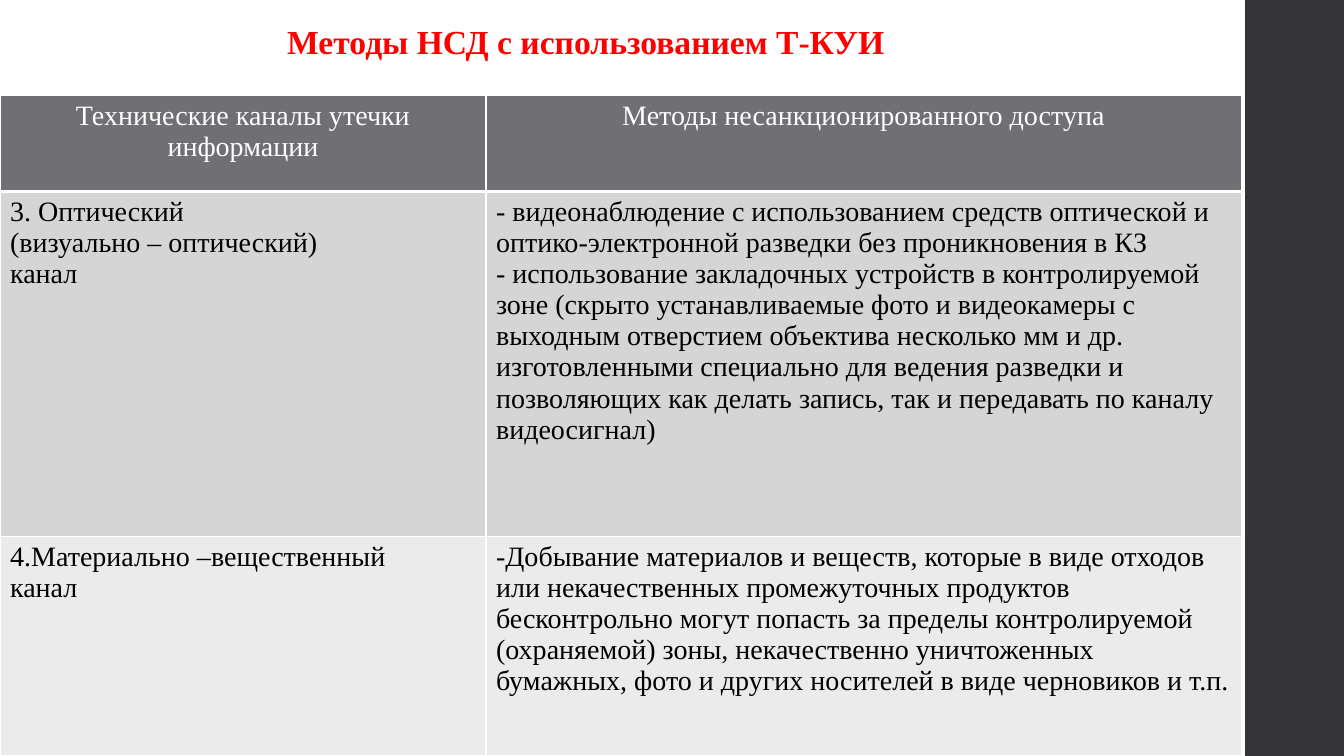
import pptx
import pptx.dml.color
import pptx.enum.shapes
import pptx.enum.text
import pptx.oxml
import pptx.oxml.ns
import pptx.util

Inches = pptx.util.Inches
RGBColor = pptx.dml.color.RGBColor

WHITE = RGBColor(0xFF, 0xFF, 0xFF)
BLACK = RGBColor(0x00, 0x00, 0x00)
RED = RGBColor(0xFF, 0x00, 0x00)
CHARCOAL = RGBColor(0x35, 0x35, 0x37)
HEADER_GRAY = RGBColor(0x6F, 0x6F, 0x74)
BAND_GRAYS = [RGBColor(0xD5, 0xD5, 0xD6), RGBColor(0xEB, 0xEB, 0xEB)]

FONT = "Times New Roman"
TITLE_FORMAT = {"name": FONT, "size": pptx.util.Pt(24), "bold": True}
CELL_FORMAT = {"name": FONT, "size": pptx.util.Pt(20), "bold": False}

COLUMN_WIDTHS = [4.82, 7.49]
ROW_HEIGHTS = [0.95, 3.42, 2.18]
ROWS = [
    [
        ["Технические каналы утечки информации"],
        ["Методы несанкционированного доступа"],
    ],
    [
        ["3. Оптический", "(визуально – оптический)", "канал"],
        [
            "- видеонаблюдение с использованием средств оптической и "
            "оптико-электронной разведки без проникновения в КЗ",
            "- использование закладочных устройств в контролируемой зоне "
            "(скрыто устанавливаемые фото и видеокамеры с выходным отверстием "
            "объектива несколько мм и др. изготовленными специально для ведения "
            "разведки и позволяющих как делать запись, так и передавать по каналу "
            "видеосигнал)",
        ],
    ],
    [
        ["4.Материально –вещественный", "канал"],
        [
            "-Добывание материалов и веществ, которые в виде отходов или "
            "некачественных промежуточных продуктов бесконтрольно могут попасть "
            "за пределы контролируемой (охраняемой) зоны, некачественно "
            "уничтоженных бумажных, фото и других носителей в виде черновиков и т.п.",
        ],
    ],
]


def write_text(tf, paragraphs, font_format, color, align):
    for i, text in enumerate(paragraphs):
        p = tf.paragraphs[0] if i == 0 else tf.add_paragraph()
        p.alignment = align
        r = p.add_run()
        r.text = text
        for name, value in font_format.items():
            setattr(r.font, name, value)
        r.font.color.rgb = color


def set_borders(cell, widths):
    """Draw white cell borders; widths maps L, R, T, B, in that order, to points."""
    tc_pr = cell._tc.get_or_add_tcPr()
    for side, width in widths.items():
        tc_pr.append(pptx.oxml.parse_xml(
            f'<a:ln{side} {pptx.oxml.ns.nsdecls("a")} w="{pptx.util.Pt(width)}">'
            f'<a:solidFill><a:srgbClr val="{WHITE}"/></a:solidFill></a:ln{side}>'
        ))


def add_side_bar(slide):
    sp = slide.shapes.add_shape(
        pptx.enum.shapes.MSO_SHAPE.RECTANGLE,
        Inches(12.35), Inches(0), Inches(0.98), Inches(7.5))
    sp.shadow.inherit = False
    sp.fill.solid()
    sp.fill.fore_color.rgb = CHARCOAL
    sp.line.fill.background()


def add_methods_table(slide):
    table = slide.shapes.add_table(
        len(ROWS), len(COLUMN_WIDTHS), Inches(0), Inches(0.95),
        Inches(sum(COLUMN_WIDTHS)), Inches(sum(ROW_HEIGHTS))).table
    for column, width in zip(table.columns, COLUMN_WIDTHS):
        column.width = Inches(width)
    for i, (row, height) in enumerate(zip(table.rows, ROW_HEIGHTS)):
        row.height = Inches(height)
        header = i == 0
        for cell, paragraphs in zip(row.cells, ROWS[i]):
            set_borders(cell, {"L": 1, "R": 1, "T": 3 if i == 1 else 1,
                               "B": 3 if header else 1})
            cell.fill.solid()
            cell.fill.fore_color.rgb = HEADER_GRAY if header else BAND_GRAYS[i - 1]
            align = pptx.enum.text.PP_ALIGN.CENTER if header else None
            write_text(cell.text_frame, paragraphs, CELL_FORMAT,
                       WHITE if header else BLACK, align)


def add_title(slide, text):
    sp = slide.shapes.add_textbox(Inches(2.75), Inches(0.16), Inches(6.19), Inches(0.5))
    tf = sp.text_frame
    tf.word_wrap = True
    tf.auto_size = pptx.enum.text.MSO_AUTO_SIZE.SHAPE_TO_FIT_TEXT
    write_text(tf, [text], TITLE_FORMAT, RED, None)


def main():
    prs = pptx.Presentation()
    prs.slide_width = Inches(13.33)
    prs.slide_height = Inches(7.5)
    slide = prs.slides.add_slide(prs.slide_layouts[6])
    add_side_bar(slide)
    add_methods_table(slide)
    add_title(slide, "Методы НСД с использованием Т-КУИ")
    prs.save("out.pptx")


if __name__ == "__main__":
    main()
